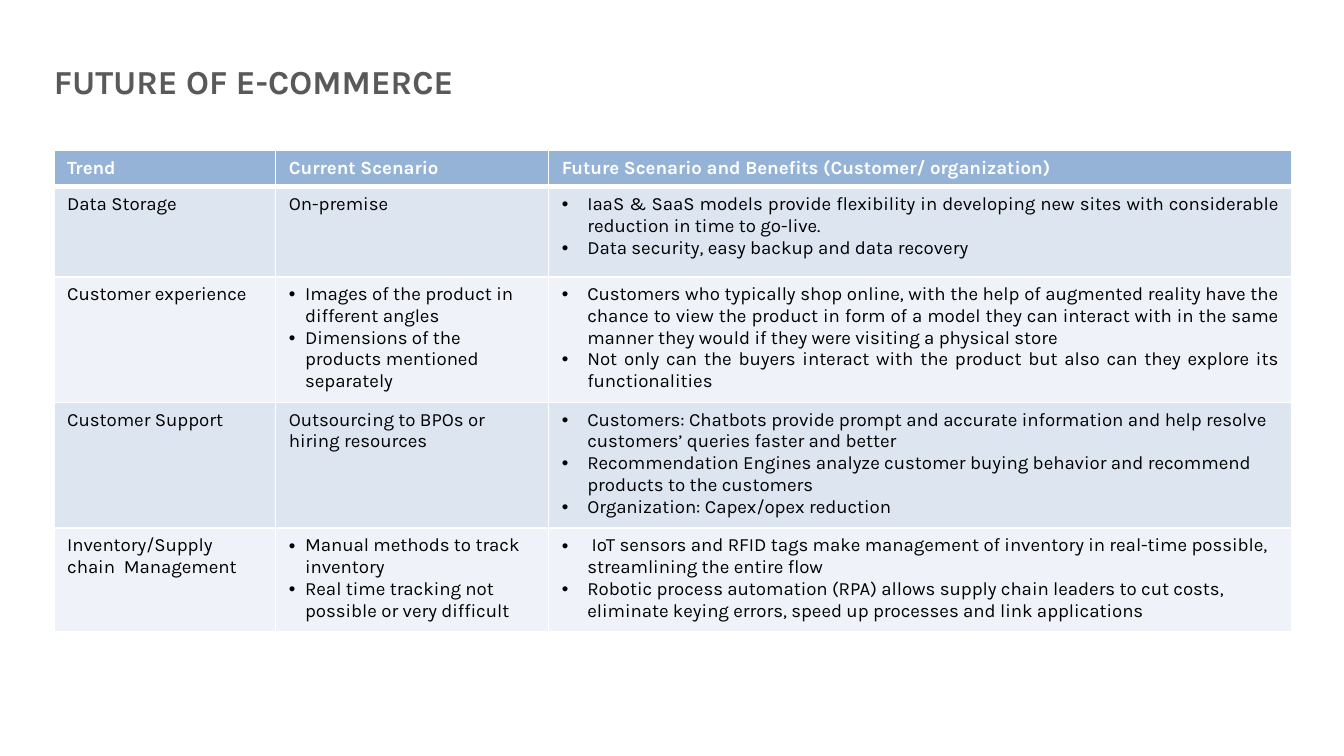
from lxml import etree
from pptx import Presentation
from pptx.dml.color import RGBColor
from pptx.enum.text import MSO_ANCHOR, MSO_AUTO_SIZE, PP_ALIGN
from pptx.oxml.ns import qn
from pptx.util import Inches, Pt

LEFT, JUSTIFY = PP_ALIGN.LEFT, PP_ALIGN.JUSTIFY
MIDDLE = MSO_ANCHOR.MIDDLE
FIT_SHAPE = MSO_AUTO_SIZE.SHAPE_TO_FIT_TEXT

HEADERS = ["Trend", "Current Scenario",
           "Future Scenario and Benefits (Customer/ organization)"]
TRENDS = [
    ("Data Storage", "On-premise", [
        "IaaS & SaaS models provide flexibility in developing new sites with "
        "considerable reduction in time to go-live. ",
        "Data security, easy backup and data recovery"], JUSTIFY),
    ("Customer experience", [
        "Images of the product in different angles",
        "Dimensions of the products mentioned separately"], [
        "Customers who typically shop online, with the help of augmented reality "
        "have the chance to view the product in form of a model they can interact "
        "with in the same manner they would if they were visiting a physical store",
        "Not only can the buyers interact with the product but also can they "
        "explore its functionalities"], JUSTIFY),
    ("Customer Support", "Outsourcing to BPOs or hiring resources", [
        "Customers: Chatbots provide prompt and accurate information and help "
        "resolve customers’ queries faster and better",
        "Recommendation Engines analyze customer buying behavior and recommend "
        "products to the customers",
        "Organization: Capex/opex reduction"], LEFT),
    ("Inventory/Supply chain  Management", [
        "Manual methods to track inventory",
        "Real time tracking not possible or very difficult"], [
        " IoT sensors and RFID tags make management of inventory in real-time "
        "possible, streamlining the entire flow",
        "Robotic process automation (RPA) allows supply chain leaders to cut costs, "
        "eliminate keying errors, speed up processes and link applications"], LEFT),
]
COL_WIDTHS = [1.65, 2.03, 5.53]
INDENTS = [0, 0.12, 0.19]
HEADER_HEIGHT, ROW_HEIGHT = 0.27, 0.67
SLIDE_WIDTH = 10


def rgb(value):
    return RGBColor.from_string(value)


class Deck:
    font = "Karla"
    title_color = "595959"
    header_fill = "95B3D7"
    bands = ["DDE5F0", "EFF2F8"]
    white, black = "FFFFFF", "000000"

    def __init__(self, prs):
        self.slide = prs.slides.add_slide(prs.slide_layouts[5])

    def run(self, p, text, size, color, bold):
        r = p.add_run()
        r.text = text
        r.font.name = self.font
        r.font.size = Pt(size)
        r.font.bold = bold
        r.font.color.rgb = rgb(color)

    def title(self, text, x, y, w, h):
        sp = self.slide.shapes.title
        sp.left, sp.top, sp.width, sp.height = map(Inches, (x, y, w, h))
        tf = sp.text_frame
        tf.word_wrap = True
        tf.auto_size = FIT_SHAPE
        tf.vertical_anchor = MIDDLE
        tf.margin_left, tf.margin_right = 0, Inches(0.1)
        tf.margin_top = tf.margin_bottom = Inches(0.05)
        p = tf.paragraphs[0]
        p.alignment = LEFT
        self.run(p, text, 18, self.title_color, True)

    def bullet(self, p, indent):
        pPr = p._p.get_or_add_pPr()
        pPr.set("marL", str(Inches(indent)))
        pPr.set("indent", str(-Inches(indent)))
        etree.SubElement(pPr, qn("a:buFont"), typeface="Arial")
        etree.SubElement(pPr, qn("a:buChar"), char="•")

    def borders(self, cell):
        tcPr = cell._tc.get_or_add_tcPr()
        for side, width in (("L", 1), ("R", 1), ("T", 1), ("B", 3)):
            ln = etree.SubElement(tcPr, qn(f"a:ln{side}"), w=str(Pt(width)))
            fill = etree.SubElement(ln, qn("a:solidFill"))
            etree.SubElement(fill, qn("a:srgbClr"), val=self.white)

    def cell(self, cell, content, fill, color, bold=False, indent=0, align=LEFT):
        cell.fill.solid()
        cell.fill.fore_color.rgb = rgb(fill)
        tf = cell.text_frame
        bulleted = isinstance(content, list)
        for i, text in enumerate(content if bulleted else [content]):
            p = tf.add_paragraph() if i else tf.paragraphs[0]
            p.alignment = align
            if bulleted:
                self.bullet(p, indent)
            self.run(p, text, 10, color, bold)

    def table(self, x, y):
        rows = len(TRENDS) + 1
        height = HEADER_HEIGHT + len(TRENDS) * ROW_HEIGHT
        table = self.slide.shapes.add_table(
            rows, len(HEADERS), Inches(x), Inches(y),
            Inches(sum(COL_WIDTHS)), Inches(height)).table
        for col, width in zip(table.columns, COL_WIDTHS):
            col.width = Inches(width)
        for i, row in enumerate(table.rows):
            row.height = Inches(ROW_HEIGHT if i else HEADER_HEIGHT)
        for c, text in enumerate(HEADERS):
            self.borders(table.cell(0, c))
            self.cell(table.cell(0, c), text, self.header_fill, self.white,
                      bold=True)
        for r, (*contents, align) in enumerate(TRENDS, 1):
            for c, content in enumerate(contents):
                self.cell(table.cell(r, c), content, self.bands[(r - 1) % 2],
                          self.black, indent=INDENTS[c],
                          align=align if c == 2 else LEFT)


def main():
    prs = Presentation()
    prs.slide_width = Inches(SLIDE_WIDTH)
    prs.slide_height = Inches(SLIDE_WIDTH * 9 / 16)
    deck = Deck(prs)
    deck.title("FUTURE OF E-COMMERCE", 0.4, 0.4, 8.24, 0.4)
    deck.table(0.4, 1.12)
    prs.save("out.pptx")


if __name__ == "__main__":
    main()
